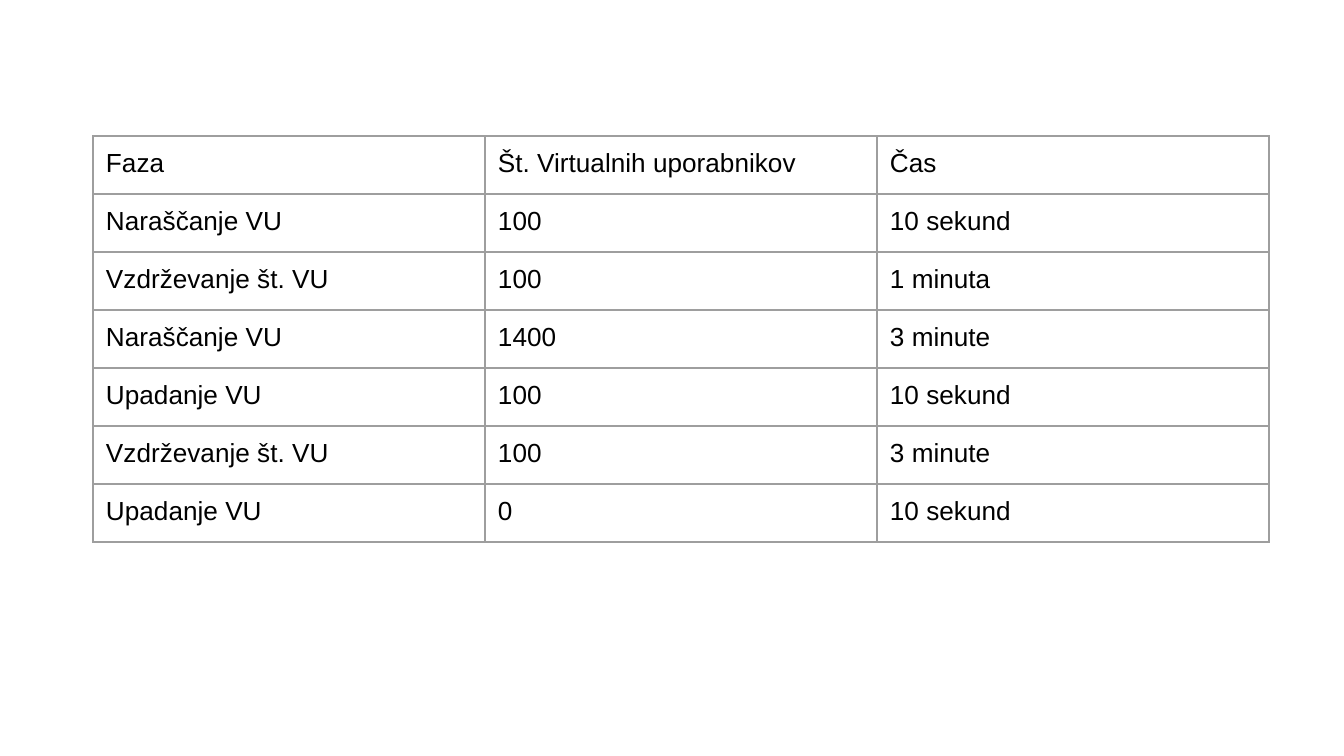
from lxml import etree
from pptx import Presentation
from pptx.dml.color import RGBColor
from pptx.oxml.ns import qn
from pptx.util import Pt

EMU_PER_PX = 914400 / 134.4
BLACK = RGBColor(0x00, 0x00, 0x00)
GRAY = RGBColor(0x9E, 0x9E, 0x9E)
FONT = "Arial"
BORDER_SIDES = ("a:lnL", "a:lnR", "a:lnT", "a:lnB")

COL_WIDTH = 392
ROW_HEIGHT = 58
CELL_MARGIN = 13

PHASES = [
    ("Faza", "Št. Virtualnih uporabnikov", "Čas"),
    ("Naraščanje VU", "100", "10 sekund"),
    ("Vzdrževanje št. VU", "100", "1 minuta"),
    ("Naraščanje VU", "1400", "3 minute"),
    ("Upadanje VU", "100", "10 sekund"),
    ("Vzdrževanje št. VU", "100", "3 minute"),
    ("Upadanje VU", "0", "10 sekund"),
]


def px(n):
    return round(n * EMU_PER_PX)


def add_borders(cell, color, width):
    tc_pr = cell._tc.get_or_add_tcPr()
    for side in BORDER_SIDES:
        ln = etree.SubElement(tc_pr, qn(side), w=str(width))
        fill = etree.SubElement(ln, qn("a:solidFill"))
        etree.SubElement(fill, qn("a:srgbClr"), val=str(color))


def format_cell(cell, text):
    cell.text = text
    cell.margin_left = cell.margin_right = px(CELL_MARGIN)
    cell.margin_top = cell.margin_bottom = px(CELL_MARGIN)
    font = cell.text_frame.paragraphs[0].font
    font.name = FONT
    font.size = Pt(14)
    font.bold = False
    font.color.rgb = BLACK
    add_borders(cell, GRAY, Pt(0.75))
    cell.fill.background()


def add_grid(slide, left, top, rows):
    n_rows, n_cols = len(rows), len(rows[0])
    table = slide.shapes.add_table(
        n_rows, n_cols, px(left), px(top),
        px(n_cols * COL_WIDTH), px(n_rows * ROW_HEIGHT),
    ).table
    table.first_row = False
    table.horz_banding = False
    for col in table.columns:
        col.width = px(COL_WIDTH)
    for row, texts in zip(table.rows, rows):
        row.height = px(ROW_HEIGHT)
        for cell, text in zip(row.cells, texts):
            format_cell(cell, text)


def main():
    prs = Presentation()
    prs.slide_width = px(1344)
    prs.slide_height = px(756)
    slide = prs.slides.add_slide(prs.slide_layouts[6])
    add_grid(slide, 93, 136, PHASES)
    prs.save("out.pptx")


if __name__ == "__main__":
    main()
